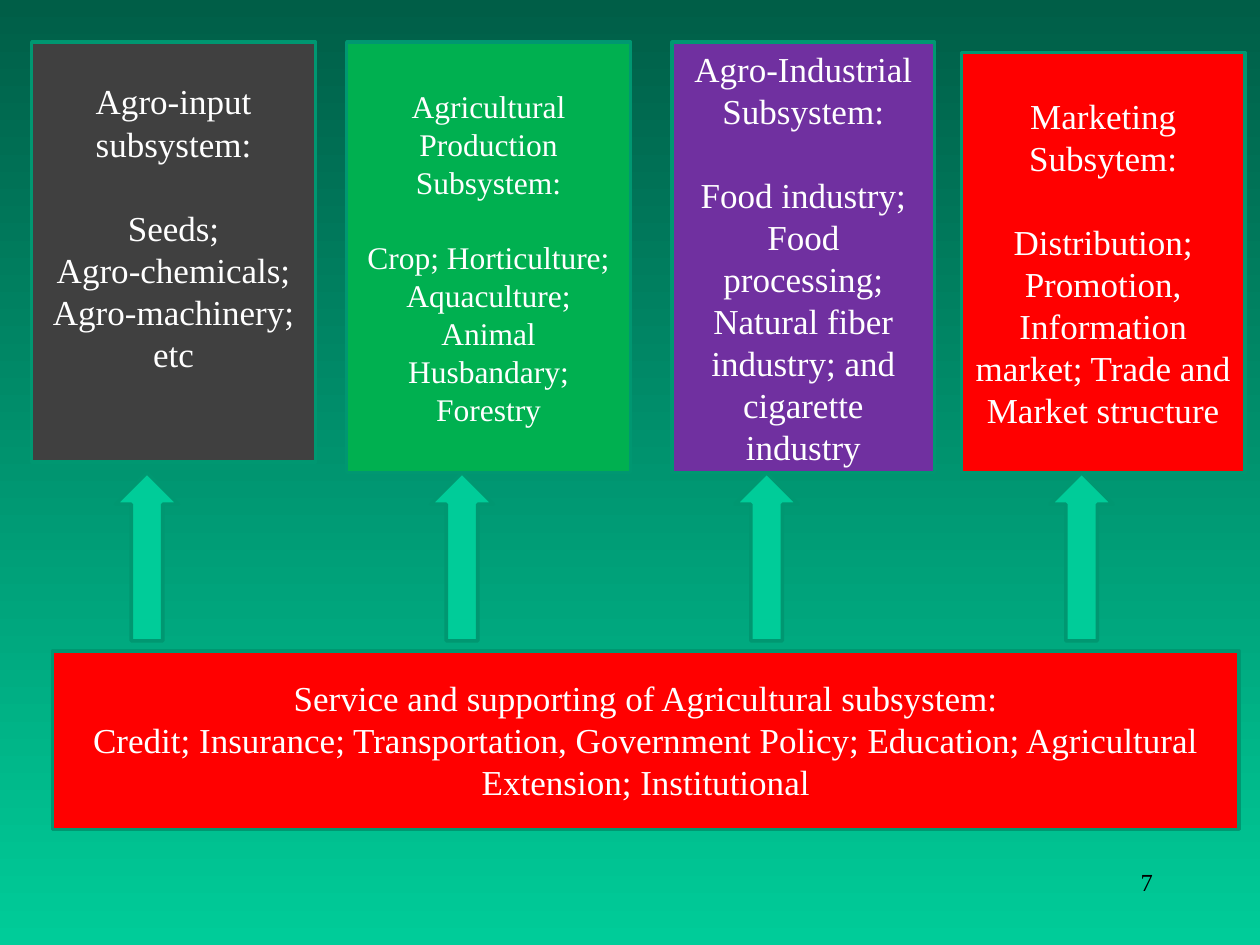
from pptx import Presentation
from pptx.dml.color import RGBColor
from pptx.enum.shapes import MSO_SHAPE
from pptx.enum.text import MSO_ANCHOR, PP_ALIGN
from pptx.util import Cm, Pt

RECT, ARROW = MSO_SHAPE.RECTANGLE, MSO_SHAPE.UP_ARROW
MIDDLE = MSO_ANCHOR.MIDDLE
CENTER, RIGHT = PP_ALIGN.CENTER, PP_ALIGN.RIGHT

HUES = {
    "dark": "005E47",
    "mint": "00CC99",
    "edge": "009771",
    "gray": "404040",
    "green": "00B050",
    "purple": "7030A0",
    "red": "FF0000",
    "white": "FFFFFF",
    "black": "000000",
}


def tint(name):
    return RGBColor.from_string(HUES[name])


class Deck:
    font = "Times New Roman"
    edge = Pt(2)
    lead = 1.2

    def __init__(self, wide, high):
        self.prs = Presentation()
        self.prs.slide_width, self.prs.slide_height = Cm(wide), Cm(high)
        self.slide = self.prs.slides.add_slide(self.prs.slide_layouts[6])

    def shade(self, top, base):
        fill = self.slide.background.fill
        fill.gradient()
        fill.gradient_angle = 270
        for stop, hue, spot in zip(fill.gradient_stops, (top, base), (0, 1)):
            stop.color.rgb = tint(hue)
            stop.position = spot

    def text(self, frame, lines, size, hue, align, gap=0):
        frame.word_wrap = True
        for i, line in enumerate(lines):
            para = frame.paragraphs[0] if i == 0 else frame.add_paragraph()
            para.alignment = align
            if i == 1:
                para.space_before = Pt(gap)
            run = para.add_run()
            run.text = line
            run.font.name = self.font
            run.font.size = Pt(size)
            run.font.color.rgb = tint(hue)

    def form(self, kind, x, y, w, h, hue):
        shape = self.slide.shapes.add_shape(kind, Cm(x), Cm(y), Cm(w), Cm(h))
        shape.shadow.inherit = False
        shape.fill.solid()
        shape.fill.fore_color.rgb = tint(hue)
        shape.line.color.rgb = tint("edge")
        shape.line.width = self.edge
        return shape

    def box(self, x, y, w, h, hue, lines, size=20, split=True, foot=0.13):
        frame = self.form(RECT, x, y, w, h, hue).text_frame
        frame.vertical_anchor = MIDDLE
        frame.margin_bottom = Cm(foot)
        gap = size * self.lead if split else 0
        self.text(frame, lines, size, "white", CENTER, gap)

    def arrow(self, x, y, w, h):
        self.form(ARROW, x, y, w, h, "mint")

    def label(self, x, y, w, h, words, size):
        area = self.slide.shapes.add_textbox(Cm(x), Cm(y), Cm(w), Cm(h))
        self.text(area.text_frame, [words], size, "black", RIGHT)


def main():
    deck = Deck(25.4, 19.05)
    deck.shade("dark", "mint")
    deck.label(18.2, 17.36, 5.29, 1.27, "7", 14)

    deck.box(0.64, 0.85, 5.72, 8.47, "gray", [
        "Agro-input subsystem:",
        "Seeds;",
        "Agro-chemicals; Agro-machinery;",
        "etc",
    ], foot=1.14)
    deck.box(6.99, 0.85, 5.72, 8.68, "green", [
        "Agricultural Production Subsystem:",
        "Crop; Horticulture;",
        "Aquaculture;",
        "Animal Husbandary; Forestry",
    ], size=18)
    deck.box(13.55, 0.85, 5.29, 8.68, "purple", [
        "Agro-Industrial Subsystem:",
        "Food industry; Food processing; Natural fiber industry; "
        "and cigarette industry",
    ])
    deck.box(19.38, 1.06, 5.72, 8.47, "red", [
        "Marketing Subsytem:",
        "Distribution; Promotion, Information market; "
        "Trade and Market structure",
    ])
    deck.box(1.06, 13.12, 23.92, 3.6, "red", [
        "Service and supporting of Agricultural subsystem:",
        "Credit; Insurance; Transportation, Government Policy; Education; "
        "Agricultural Extension; Institutional",
    ], split=False)

    for x in (2.33, 8.68, 14.82, 21.17):
        deck.arrow(x, 9.53, 1.27, 3.39)

    deck.prs.save("out.pptx")


if __name__ == "__main__":
    main()
